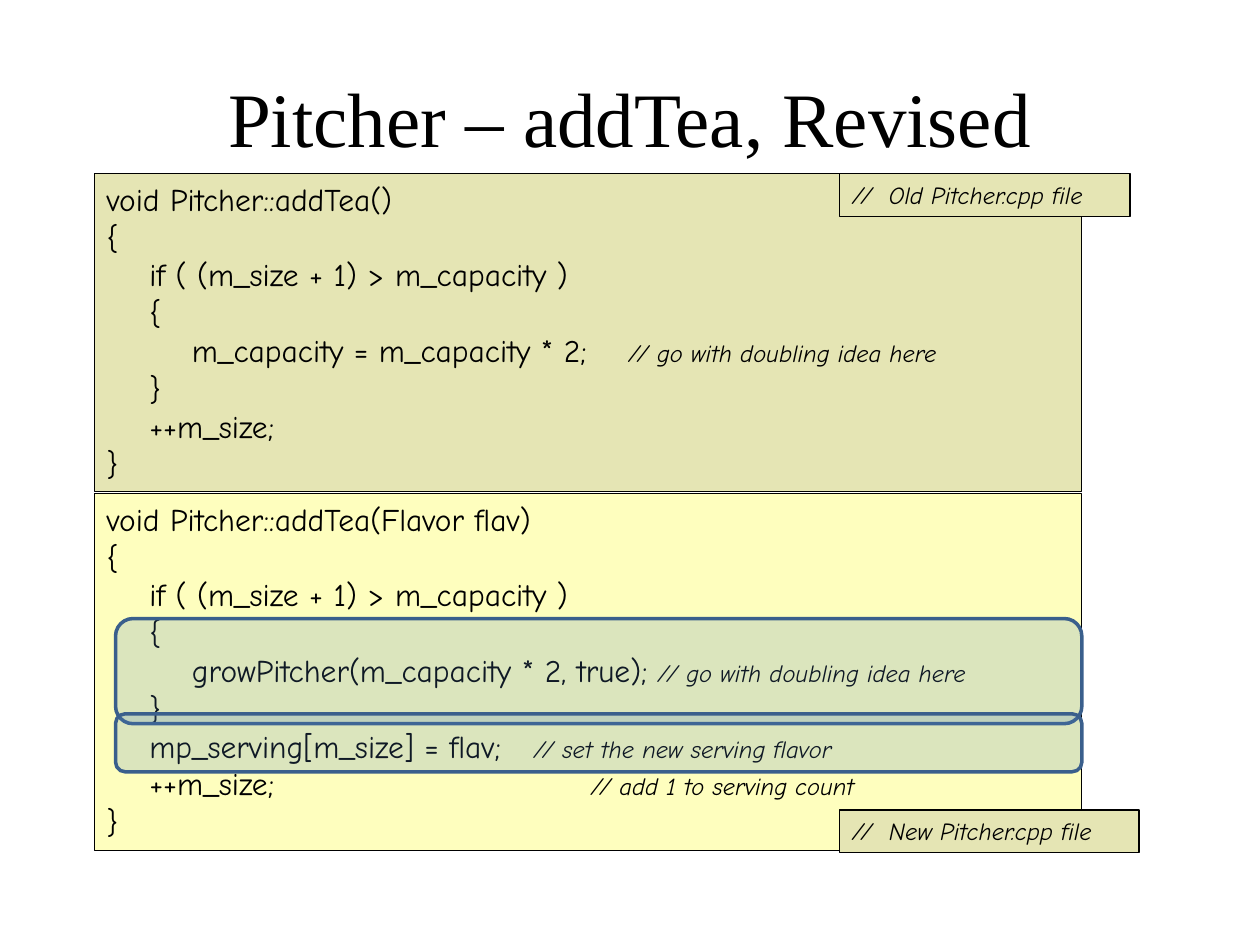
import pptx
import pptx.dml.color
import pptx.enum.shapes
import pptx.enum.text
import pptx.oxml
import pptx.oxml.ns
import pptx.util
from lxml import etree
from pptx.util import Cm, Pt

COLOURS = {"text": "000000", "old": "E5E5B4", "new": "FEFEBE",
           "marker": "4F81BD", "marker_line": "3A5F8C"}
CODE_FONT = "Comic Neue"
TAB_WIDTH = 0.86
SHAPES = pptx.enum.shapes.MSO_SHAPE

# Each line is (code, comment, comment position in cm from the text edge).
OLD_CODE = [
    ("void Pitcher::addTea()",),
    ("{",),
    ("\tif ( (m_size + 1) > m_capacity )",),
    ("\t{",),
    ("\t\tm_capacity = m_capacity * 2;\t", "// go with doubling idea here", 10.52),
    ("\t}",),
    ("\t++m_size;",),
    ("}",),
]
NEW_CODE = [
    ("void Pitcher::addTea(Flavor flav)",),
    ("{",),
    ("\tif ( (m_size + 1) > m_capacity )",),
    ("\t{",),
    ("\t\tgrowPitcher(m_capacity * 2, true);\t", "// go with doubling idea here", 11.11),
    ("\t}",),
    ("\tmp_serving[m_size] = flav;\t", "// set the new serving flavor", 8.61),
    ("\t++m_size;\t", "// add 1 to serving count", 9.76),
    ("}",),
]


def rgb(name):
    return pptx.dml.color.RGBColor.from_string(COLOURS[name])


def style_run(run, size, font=CODE_FONT, italic=False):
    run.font.size = Pt(size)
    run.font.name = font
    run.font.italic = italic
    run.font.color.rgb = rgb("text")


def set_tab_stops(paragraph, positions):
    properties = paragraph._p.get_or_add_pPr()
    tab_list = etree.SubElement(properties, pptx.oxml.ns.qn("a:tabLst"))
    for position in positions:
        etree.SubElement(tab_list, pptx.oxml.ns.qn("a:tab"),
                         pos=str(Cm(position)), algn="l")


def add_box(slide, kind, box, fill, line, line_width):
    shape = slide.shapes.add_shape(kind, *(Cm(length) for length in box))
    shape.shadow.inherit = False
    shape.fill.solid()
    shape.fill.fore_color.rgb = rgb(fill)
    shape.line.color.rgb = rgb(line)
    shape.line.width = Pt(line_width)
    return shape


def add_title(slide, box, text):
    frame = slide.shapes.add_textbox(*(Cm(length) for length in box)).text_frame
    frame.word_wrap = True
    frame.vertical_anchor = pptx.enum.text.MSO_ANCHOR.MIDDLE
    frame.text = text
    paragraph = frame.paragraphs[0]
    paragraph.alignment = pptx.enum.text.PP_ALIGN.CENTER
    style_run(paragraph.runs[0], 44, "Times New Roman")


def add_text_panel(slide, box, fill):
    """Add an outlined rectangle and return its left-aligned text frame."""
    shape = add_box(slide, SHAPES.RECTANGLE, box, fill, "text", 0.75)
    frame = shape.text_frame
    frame.word_wrap = True
    frame.vertical_anchor = pptx.enum.text.MSO_ANCHOR.TOP
    return frame


def add_code_panel(slide, box, fill, lines):
    frame = add_text_panel(slide, box, fill)
    for index, (code, *comment) in enumerate(lines):
        paragraph = frame.add_paragraph() if index else frame.paragraphs[0]
        paragraph.alignment = pptx.enum.text.PP_ALIGN.LEFT
        stops = [TAB_WIDTH * level for level in range(1, code.count("\t") + 1)]
        if comment:
            stops[-1] = comment[1]
        if stops:
            set_tab_stops(paragraph, stops)
        run = paragraph.add_run()
        run.text = code
        style_run(run, 18)
        if comment:
            run = paragraph.add_run()
            run.text = comment[0]
            style_run(run, 14, italic=True)


def add_file_label(slide, box, text):
    frame = add_text_panel(slide, box, "old")
    frame.text = text
    paragraph = frame.paragraphs[0]
    paragraph.alignment = pptx.enum.text.PP_ALIGN.LEFT
    style_run(paragraph.runs[0], 14, italic=True)


def add_marker(slide, box):
    """Add a translucent rounded box over changed code."""
    shape = add_box(slide, SHAPES.ROUNDED_RECTANGLE, box, "marker", "marker_line", 2)
    colour = shape.fill._xPr.find(".//" + pptx.oxml.ns.qn("a:srgbClr"))
    etree.SubElement(colour, pptx.oxml.ns.qn("a:alpha"), val="20000")


def main():
    presentation = pptx.Presentation()
    presentation.slide_width = Cm(25.4)
    presentation.slide_height = Cm(19.05)
    slide = presentation.slides.add_slide(presentation.slide_layouts[6])

    add_title(slide, (1.27, 0.76, 22.86, 3.18), "Pitcher – addTea, Revised")
    add_code_panel(slide, (1.9, 3.5, 19.9, 6.41), "old", OLD_CODE)
    add_file_label(slide, (16.93, 3.5, 5.85, 0.86), "//  Old Pitcher.cpp file")
    add_code_panel(slide, (1.9, 9.95, 19.9, 7.19), "new", NEW_CODE)
    add_file_label(slide, (16.93, 16.33, 6.03, 0.86), "//  New Pitcher.cpp file")
    for top, height in ((12.47, 2.12), (14.39, 1.17)):
        add_marker(slide, (2.33, top, 19.48, height))

    presentation.save("out.pptx")


if __name__ == "__main__":
    main()
